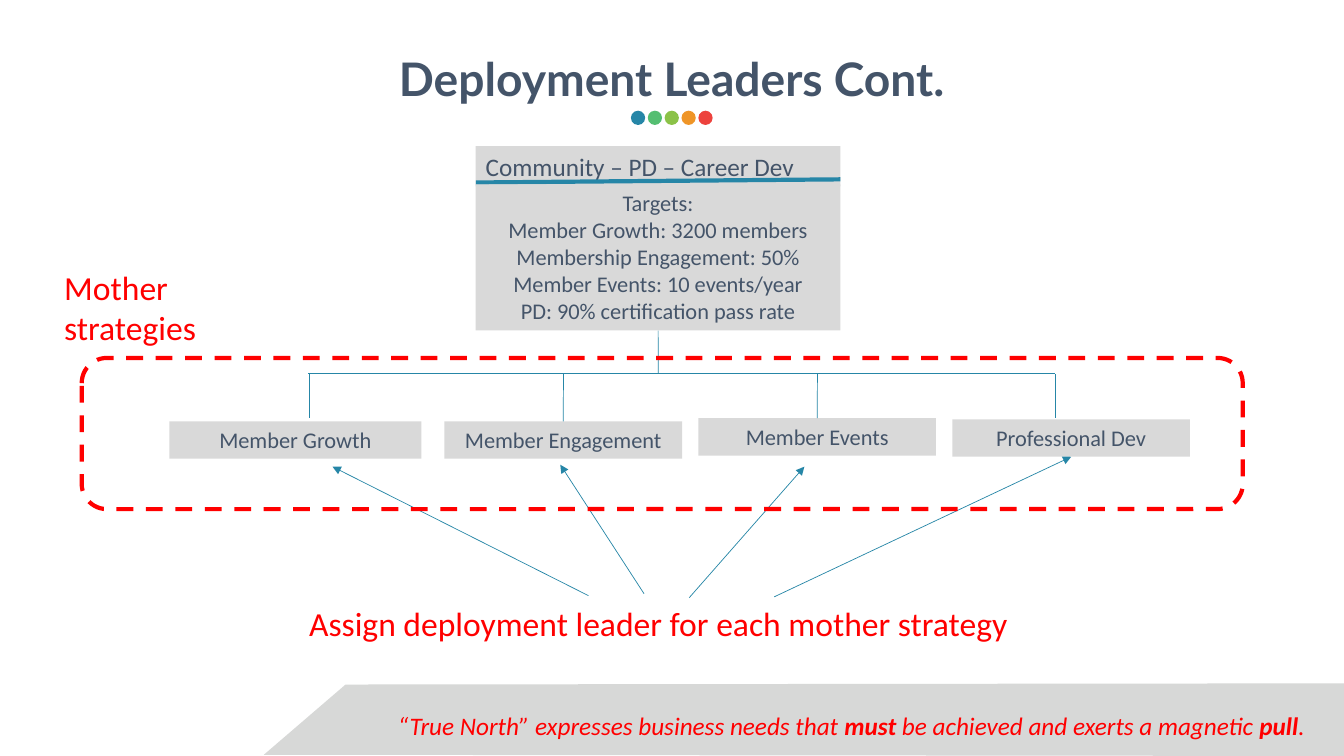
from lxml.etree import SubElement
from pptx import Presentation
from pptx.dml.color import RGBColor
from pptx.enum.dml import MSO_LINE
from pptx.enum.shapes import MSO_CONNECTOR, MSO_SHAPE
from pptx.enum.text import MSO_ANCHOR, MSO_AUTO_SIZE, PP_ALIGN
from pptx.oxml.ns import qn
from pptx.util import Cm, Pt

HUES = {
    "slate": "445469", "grey": "D9D9D9", "band": "D7D8D7", "red": "FF0000",
    "blue": "2686A7", "green": "54BE71", "lime": "8BC248",
    "orange": "EF9527", "coral": "ED423D",
}


class Board:
    def __init__(self, deck):
        self.slide = deck.slides.add_slide(deck.slide_layouts[5])
        self.shapes = self.slide.shapes
        self.font = "Calibri"

    def hue(self, name):
        return RGBColor.from_string(HUES[name])

    def letter(self, shape, lines, size, hue, align=PP_ALIGN.LEFT, font=None, bold=False, slant=False):
        frame = shape.text_frame
        frame.word_wrap = True
        frame.auto_size = MSO_AUTO_SIZE.NONE
        frame.vertical_anchor = MSO_ANCHOR.TOP
        for i, line in enumerate(lines):
            para = frame.add_paragraph() if i else frame.paragraphs[0]
            para.alignment = align
            for words, strong in line:
                run = para.add_run()
                run.text = words
                run.font.name = font or self.font
                run.font.size = Pt(size)
                run.font.bold = bold or strong
                run.font.italic = slant
                run.font.color.rgb = self.hue(hue)

    def title(self, words, *area):
        shape = self.shapes.title
        shape.left, shape.top, shape.width, shape.height = map(Cm, area)
        frame = shape.text_frame
        frame.margin_left = frame.margin_right = frame.margin_top = frame.margin_bottom = 0
        self.letter(shape, [[(words, False)]], 33, "slate", PP_ALIGN.CENTER, "Lato", True)

    def form(self, kind, hue, *area):
        shape = self.shapes.add_shape(kind, *map(Cm, area))
        self.paint(shape, hue)
        return shape

    def paint(self, shape, hue):
        shape.shadow.inherit = False
        shape.fill.solid()
        shape.fill.fore_color.rgb = self.hue(hue)
        shape.line.fill.background()

    def box(self, lines, size, align, *area):
        shape = self.form(MSO_SHAPE.RECTANGLE, "grey", *area)
        self.letter(shape, [[(line, False)] for line in lines], size, "slate", align)
        return shape

    def frame(self, *area):
        shape = self.form(MSO_SHAPE.ROUNDED_RECTANGLE, "red", *area)
        shape.fill.background()
        shape.line.color.rgb = self.hue("red")
        shape.line.width = Pt(3)
        shape.line.dash_style = MSO_LINE.DASH

    def label(self, runs, size, *area, slant=False):
        shape = self.shapes.add_textbox(*map(Cm, area))
        self.letter(shape, [runs], size, "red", slant=slant)

    def wire(self, *ends, width=0.5, arrow=False):
        wire = self.shapes.add_connector(MSO_CONNECTOR.STRAIGHT, *map(Cm, ends))
        wire.line.color.rgb = self.hue("blue")
        wire.line.width = Pt(width)
        style = wire.element.spPr
        if arrow:
            SubElement(style.find(qn("a:ln")), qn("a:tailEnd"), type="triangle")
        SubElement(style, qn("a:effectLst"))
        return wire

    def band(self, first, *rest):
        pen = self.shapes.build_freeform(*map(Cm, first), scale=1.0)
        pen.add_line_segments([tuple(map(Cm, spot)) for spot in rest], close=True)
        self.paint(pen.convert_to_shape(), "band")


def main():
    deck = Presentation()
    deck.slide_width, deck.slide_height = Cm(33.87), Cm(19.05)
    board = Board(deck)
    board.band((8.71, 17.25), (33.87, 17.22), (33.87, 19.05), (6.65, 19.02))
    for i, hue in enumerate(("blue", "green", "lime", "orange", "coral")):
        board.form(MSO_SHAPE.OVAL, hue, 15.9 + 1.7 * i / 4, 2.79, 0.36, 0.36)
    board.title("Deployment Leaders Cont.", 9.78, 1.27, 14.3, 1.42)

    board.box(["Community – PD – Career Dev"], 18, PP_ALIGN.LEFT, 11.99, 3.68, 9.19, 1.02)
    board.wire(11.99, 4.6, 21.18, 4.52, width=3)
    goals = [
        "Targets:",
        "Member Growth: 3200 members",
        "Membership Engagement: 50%",
        "Member Events: 10 events/year",
        "PD: 90% certification pass rate",
    ]
    targets = board.box(goals, 16, PP_ALIGN.CENTER, 11.99, 4.65, 9.19, 3.68)

    board.wire(7.77, 9.42, 26.59, 9.42)
    board.wire(16.59, 8.33, 16.59, 9.42).begin_connect(targets, 2)

    plans = [
        ("Member Growth", 4.27, 10.62, 6.35, 7.8, (14.83, 15.01, 8.38, 11.76)),
        ("Member Engagement", 11.2, 10.62, 5.99, 14.2, (16.23, 14.96, 14.12, 11.71)),
        ("Member Events", 17.6, 10.54, 5.99, 20.6, (17.37, 15.06, 20.27, 11.76)),
        ("Professional Dev", 24, 10.57, 5.99, 26.59, (19.51, 15.04, 27, 11.51)),
    ]
    for name, left, top, width, drop, ends in plans:
        plan = board.box([name], 16, PP_ALIGN.CENTER, left, top, width, 0.94)
        stem = board.wire(drop, 9.43, drop, 10.53)
        if abs(drop - left - width / 2) < 0.05:
            stem.end_connect(plan, 0)
        arrow = board.wire(*ends, arrow=True)
        if abs(ends[3] - top - 0.94) < 0.05:
            arrow.end_connect(plan, 2)

    board.label([("Assign deployment leader for each mother strategy", False)], 24, 7.54, 15.06, 19.61, 1.27)
    board.label([("Mother strategies", False)], 24, 1.37, 6.6, 5.28, 2.31)
    board.frame(2.06, 9.02, 29.26, 3.81)
    quote = [
        ("“True North” expresses business needs that ", False),
        ("must", True),
        (" be achieved and exerts a magnetic ", False),
        ("pull", True),
        (".", False),
    ]
    board.label(quote, 18, 9.78, 17.78, 24.08, 1.02, slant=True)
    deck.save("out.pptx")


if __name__ == "__main__":
    main()
